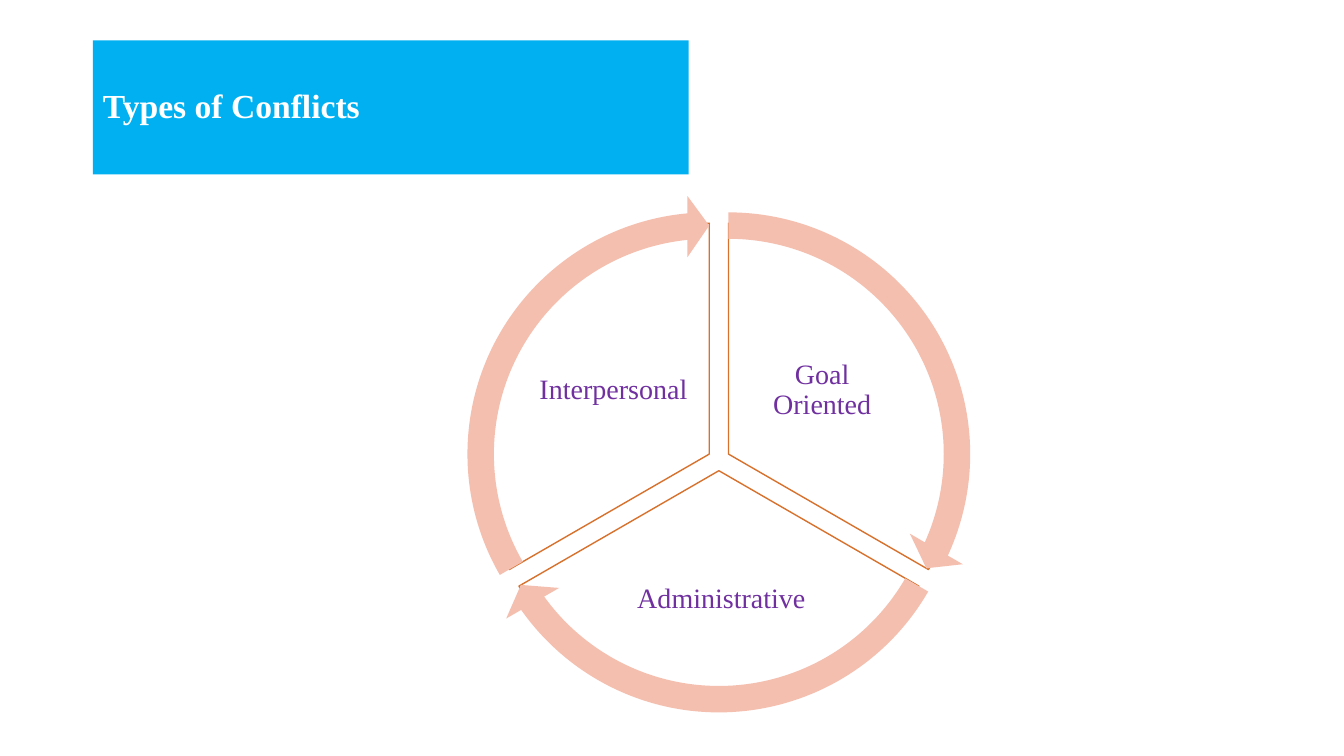
from math import cos, radians, sin

from pptx import Presentation
from pptx.dml.color import RGBColor
from pptx.enum.shapes import MSO_SHAPE
from pptx.enum.text import MSO_ANCHOR, PP_ALIGN
from pptx.util import Emu, Pt

PX = 9144  # EMU per px, 100 px to the inch
FONT = "Times New Roman"
WHITE = RGBColor(0xFF, 0xFF, 0xFF)
SKY = RGBColor(0x00, 0xB0, 0xF0)
PURPLE = RGBColor(0x70, 0x30, 0xA0)
ORANGE = RGBColor(0xD7, 0x71, 0x2C)
PEACH = RGBColor(0xF4, 0xBF, 0xAE)

GAP = 11         # how far each sector moves out from the centre
RING_INSET = 28  # from the arrow's box to the sector's box
HEAD_ANGLE = 3.275

# Conflict, start and end angle in degrees, label box within the wheel
CONFLICTS = [
    ("Goal Oriented", 270, 30, (289, 131, 163, 136)),
    ("Administrative", 30, 150, (148, 347, 245, 120)),
    ("Interpersonal", 150, 270, (82, 131, 163, 136)),
]


def px(length):
    return Emu(round(length * PX))


def write(frame, text, size, color, align, bold=False):
    frame.word_wrap = True
    frame.vertical_anchor = MSO_ANCHOR.MIDDLE
    paragraph = frame.paragraphs[0]
    paragraph.alignment = align
    paragraph.line_spacing = 0.9
    run = paragraph.add_run()
    run.text = text
    run.font.name = FONT
    run.font.size = Pt(size)
    run.font.bold = bold
    run.font.color.rgb = color


def add_title(slide, left, top, width, height):
    title = slide.shapes.title
    title.left, title.top = px(left), px(top)
    title.width, title.height = px(width), px(height)
    title.fill.solid()
    title.fill.fore_color.rgb = SKY
    write(title.text_frame, "Types of Conflicts", 24, WHITE, PP_ALIGN.LEFT, bold=True)


def add_round(wheel, preset, left, top, size, fill, adjustments):
    part = wheel.shapes.add_shape(preset, px(left), px(top), px(size), px(size))
    part.shadow.inherit = False
    part.fill.solid()
    part.fill.fore_color.rgb = fill
    part.line.fill.background()
    for index, value in enumerate(adjustments):
        part.adjustments[index] = value
    return part


def add_label(wheel, text, left, top, width, height):
    label = wheel.shapes.add_textbox(px(left), px(top), px(width), px(height))
    frame = label.text_frame
    frame.margin_left = frame.margin_right = px(4)
    frame.margin_top = frame.margin_bottom = px(3)
    write(frame, text, 20, PURPLE, PP_ALIGN.CENTER)


def add_wheel(slide, left, top, size):
    wheel = slide.shapes.add_group_shape()
    ring = size - 2 * GAP
    arrows = []

    # Sectors with their labels
    for text, start, end, (x, y, width, height) in CONFLICTS:
        middle = radians(start + 60)
        ring_left = left + GAP + GAP * cos(middle)
        ring_top = top + GAP + GAP * sin(middle)
        # Angle adjustments count 0.6 per degree
        start_adj, end_adj = start * 0.6, end * 0.6
        sector = add_round(wheel, MSO_SHAPE.PIE, ring_left + RING_INSET,
                           ring_top + RING_INSET, ring - 2 * RING_INSET,
                           WHITE, (start_adj, end_adj))
        sector.line.color.rgb = ORANGE
        sector.line.width = Pt(1)
        add_label(wheel, text, left + x, top + y, width, height)
        arrows.append((ring_left, ring_top, start_adj, end_adj))

    # Arrows around the sectors
    for ring_left, ring_top, start_adj, end_adj in arrows:
        add_round(wheel, MSO_SHAPE.CIRCULAR_ARROW, ring_left, ring_top, ring, PEACH,
                  (0.051, HEAD_ANGLE, end_adj - HEAD_ANGLE, start_adj, 0.059))


def main():
    deck = Presentation()
    deck.slide_width, deck.slide_height = px(1333), px(750)
    slide = deck.slides.add_slide(deck.slide_layouts[5])
    add_title(slide, 92, 40, 591, 133)
    add_wheel(slide, 445, 188, 536)
    deck.save("out.pptx")


if __name__ == "__main__":
    main()
